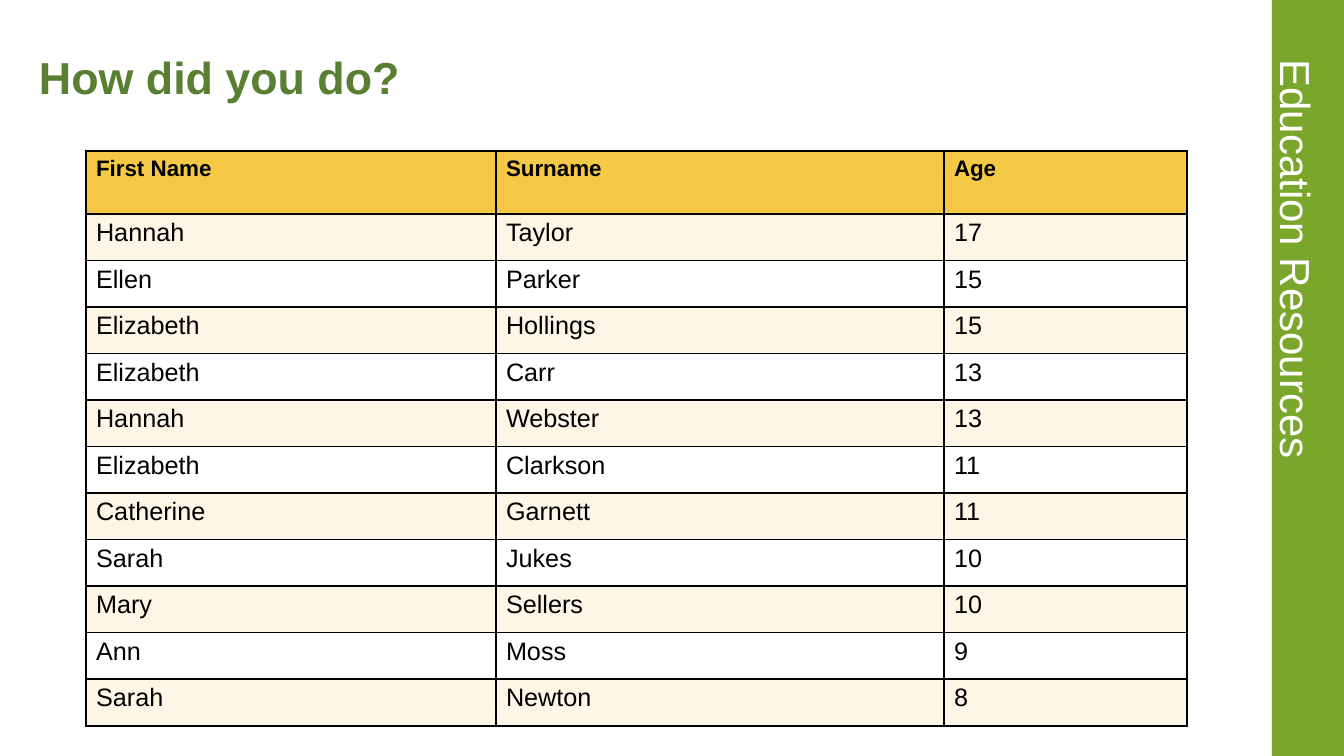
from lxml import etree
from pptx import Presentation
from pptx import util as u
from pptx.dml.color import RGBColor
from pptx.enum import shapes, text
from pptx.oxml.ns import qn

SCALE = 914400 / 100.8  # EMU per px


def px(n):
    return u.Emu(round(n * SCALE))


def style(p, size, color, bold=False):
    f = p.runs[0].font
    f.name, f.size, f.bold = "Arial", u.Pt(size), bold
    f.color.rgb = RGBColor.from_string(color)


prs = Presentation()
prs.slide_width, prs.slide_height = px(1344), px(756)
s = prs.slides.add_slide(prs.slide_layouts[6])

# Green side band
sp = s.shapes.add_shape(shapes.MSO_SHAPE.RECTANGLE, px(1272), 0, px(72), px(756))
sp.shadow.inherit = False
sp.fill.solid()
sp.fill.fore_color.rgb = RGBColor.from_string("7AA62C")
sp.line.fill.background()

# Vertical label on the band
sp = s.shapes.add_textbox(px(1116), px(223), px(404), px(72))
sp.rotation = 90
tf = sp.text_frame
tf.word_wrap = True
tf.auto_size = text.MSO_AUTO_SIZE.SHAPE_TO_FIT_TEXT
tf.margin_left = tf.margin_right = tf.margin_top = tf.margin_bottom = 0
tf.text = "Education Resources"
p = tf.paragraphs[0]
p.alignment = text.PP_ALIGN.CENTER
p.line_spacing = u.Pt(58.8)
style(p, 30, "FFFFFF")

# Title
sp = s.shapes.add_textbox(px(39), px(40), px(1213), px(79))
tf = sp.text_frame
tf.word_wrap = True
tf.vertical_anchor = text.MSO_ANCHOR.MIDDLE
tf.margin_left = 0
tf.text = "How did you do?"
p = tf.paragraphs[0]
p.line_spacing = 0.9
style(p, 32, "597F32", True)

# Table of names and ages
rows = [
    ("First Name", "Surname", "Age"),
    ("Hannah", "Taylor", "17"),
    ("Ellen", "Parker", "15"),
    ("Elizabeth", "Hollings", "15"),
    ("Elizabeth", "Carr", "13"),
    ("Hannah", "Webster", "13"),
    ("Elizabeth", "Clarkson", "11"),
    ("Catherine", "Garnett", "11"),
    ("Sarah", "Jukes", "10"),
    ("Mary", "Sellers", "10"),
    ("Ann", "Moss", "9"),
    ("Sarah", "Newton", "8"),
]
widths = [410, 448, 243]
header_height, body_height = 63, 512
table = s.shapes.add_table(len(rows), len(widths), px(86), px(151),
                           px(sum(widths)), px(header_height + body_height)).table
for column, width in zip(table.columns, widths):
    column.width = px(width)

for i, row in enumerate(rows):
    header = i == 0
    table.rows[i].height = px(header_height if header else body_height / (len(rows) - 1))
    for j, value in enumerate(row):
        cell = table.cell(i, j)
        cell.text = value
        style(cell.text_frame.paragraphs[0], 16 if header else 18, "000000", header)
        # Black border on every side, placed ahead of the fill
        for side in ("a:lnL", "a:lnR", "a:lnT", "a:lnB"):
            ln = etree.SubElement(cell._tc.get_or_add_tcPr(), qn(side), w=str(u.Pt(1.5)))
            fill = etree.SubElement(ln, qn("a:solidFill"))
            etree.SubElement(fill, qn("a:srgbClr"), val="000000")
        # Header colour, then cream on odd rows
        if header or i % 2:
            cell.fill.solid()
            cell.fill.fore_color.rgb = RGBColor.from_string("F5C946" if header else "FDF5E5")
        else:
            cell.fill.background()

prs.save("out.pptx")
